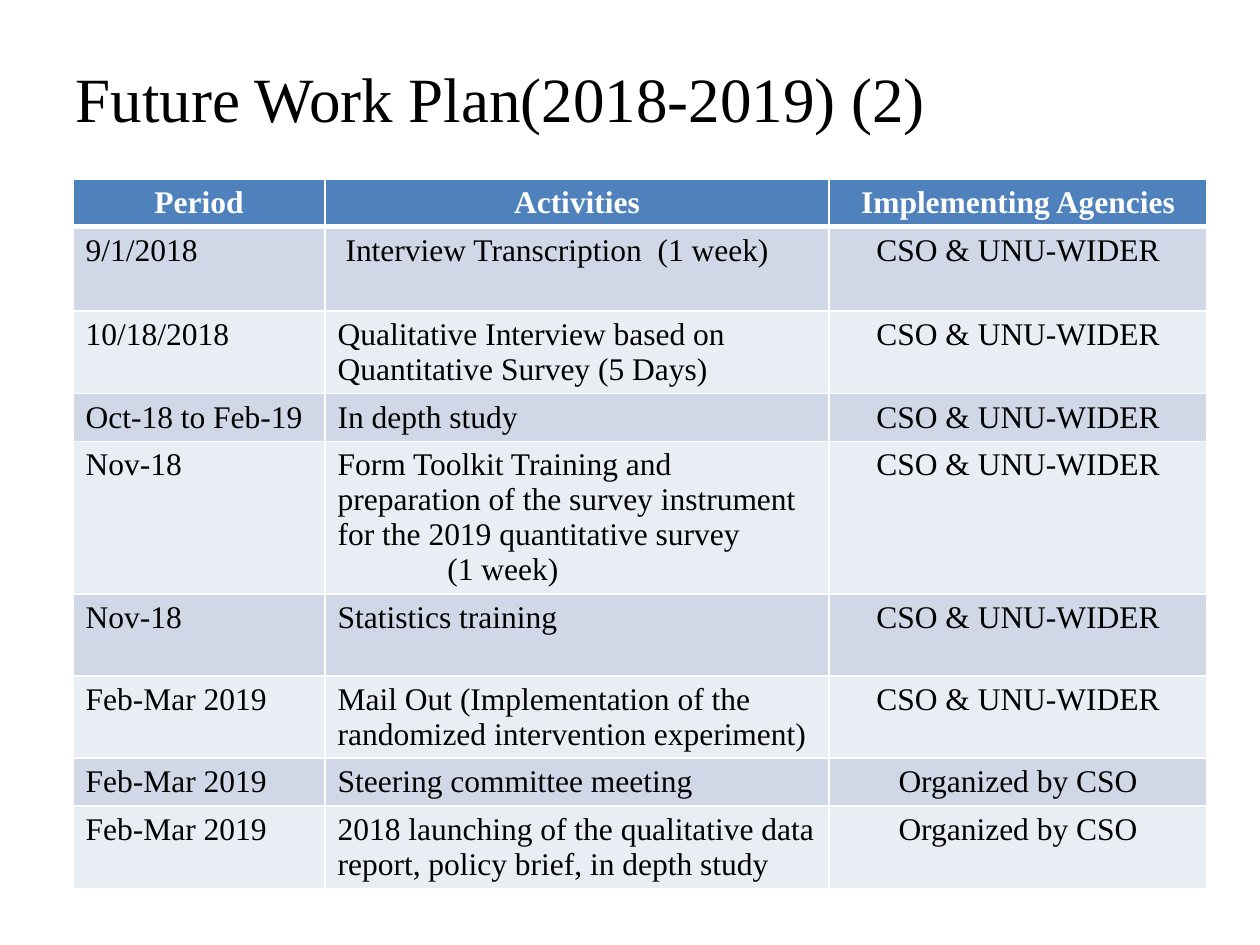
import pptx
import pptx.util
import pptx.dml.color
import pptx.enum.text
import pptx.oxml
import pptx.oxml.ns
from pptx.util import Inches

TITLE = "Future Work Plan(2018-2019) (2)"
FONT = "Times New Roman"
HEADER = ("Period", "Activities", "Implementing Agencies")
BOTH = "CSO & UNU-WIDER"
CSO = "Organized by CSO"
# Period, activity paragraphs, agency, row height
PLAN = [
    ("9/1/2018", [" Interview Transcription  (1 week)"], BOTH, 0.67),
    ("10/18/2018", ["Qualitative Interview based on Quantitative Survey (5 Days)"], BOTH, 0.65),
    ("Oct-18 to Feb-19", ["In depth study"], BOTH, 0.38),
    ("Nov-18", ["Form Toolkit Training and preparation of the survey instrument "
                "for the 2019 quantitative survey", "(1 week)"], BOTH, 1.21),
    ("Nov-18", ["Statistics training"], BOTH, 0.65),
    ("Feb-Mar 2019", ["Mail Out (Implementation of the randomized intervention experiment)"],
     BOTH, 0.65),
    ("Feb-Mar 2019", ["Steering committee meeting"], CSO, 0.38),
    ("Feb-Mar 2019", ["2018 launching of the qualitative data report, policy brief, "
                      "in depth study"], CSO, 0.65),
]
COL_WIDTHS = (2, 4, 3)
HEADER_HEIGHT = 0.38
DURATION_INDENT = 0.87
HEADER_FILL = "4F81BD"
BAND_FILLS = ("D0D8E8", "E9EDF4")
WHITE, BLACK = "FFFFFF", "000000"
LEFT = pptx.enum.text.PP_ALIGN.LEFT
CENTER = pptx.enum.text.PP_ALIGN.CENTER


def rgb(color):
    return pptx.dml.color.RGBColor.from_string(color)


def write(p, text, size=18, color=BLACK, bold=False, align=LEFT, indent=0):
    p.alignment = align
    if indent:
        p._p.get_or_add_pPr().set("marL", str(Inches(indent)))
    r = p.add_run()
    r.text = text
    r.font.name = FONT
    r.font.size = pptx.util.Pt(size)
    r.font.bold = bold
    r.font.color.rgb = rgb(color)


def fill_cell(cell, color, bottom=1):
    """Set white borders (bottom width in points) and a solid fill."""
    tcPr = cell._tc.get_or_add_tcPr()
    for side, width in (("L", 1), ("R", 1), ("T", 1), ("B", bottom)):
        tcPr.append(pptx.oxml.parse_xml(
            f'<a:ln{side} {pptx.oxml.ns.nsdecls("a")} w="{pptx.util.Pt(width)}">'
            f'<a:solidFill><a:srgbClr val="{WHITE}"/></a:solidFill></a:ln{side}>'))
    cell.fill.solid()
    cell.fill.fore_color.rgb = rgb(color)


def add_title(s):
    title = s.shapes.title
    title.left, title.top = Inches(0.5), Inches(0.3)
    title.width, title.height = Inches(9), Inches(0.95)
    tf = title.text_frame
    tf.vertical_anchor = pptx.enum.text.MSO_ANCHOR.MIDDLE
    write(tf.paragraphs[0], TITLE, size=36)


def add_plan(s):
    heights = [HEADER_HEIGHT] + [row[-1] for row in PLAN]
    table = s.shapes.add_table(len(heights), len(COL_WIDTHS), Inches(0.58), Inches(1.42),
                               Inches(sum(COL_WIDTHS)), Inches(sum(heights))).table
    for column, width in zip(table.columns, COL_WIDTHS):
        column.width = Inches(width)
    for row, height in zip(table.rows, heights):
        row.height = Inches(height)

    for c, text in enumerate(HEADER):
        cell = table.cell(0, c)
        fill_cell(cell, HEADER_FILL, bottom=3)
        write(cell.text_frame.paragraphs[0], text, color=WHITE, bold=True, align=CENTER)

    for i, (period, activity, agency, _) in enumerate(PLAN):
        for c, lines in enumerate(([period], activity, [agency])):
            cell = table.cell(i + 1, c)
            fill_cell(cell, BAND_FILLS[i % 2], bottom=1)
            tf = cell.text_frame
            for n, line in enumerate(lines):
                p = tf.add_paragraph() if n else tf.paragraphs[0]
                write(p, line, align=CENTER if c == 2 else LEFT,
                      indent=DURATION_INDENT if n else 0)


def main():
    prs = pptx.Presentation()
    prs.slide_width, prs.slide_height = Inches(10), Inches(7.5)
    s = prs.slides.add_slide(prs.slide_layouts[5])
    add_title(s)
    add_plan(s)
    prs.save("out.pptx")


if __name__ == "__main__":
    main()
